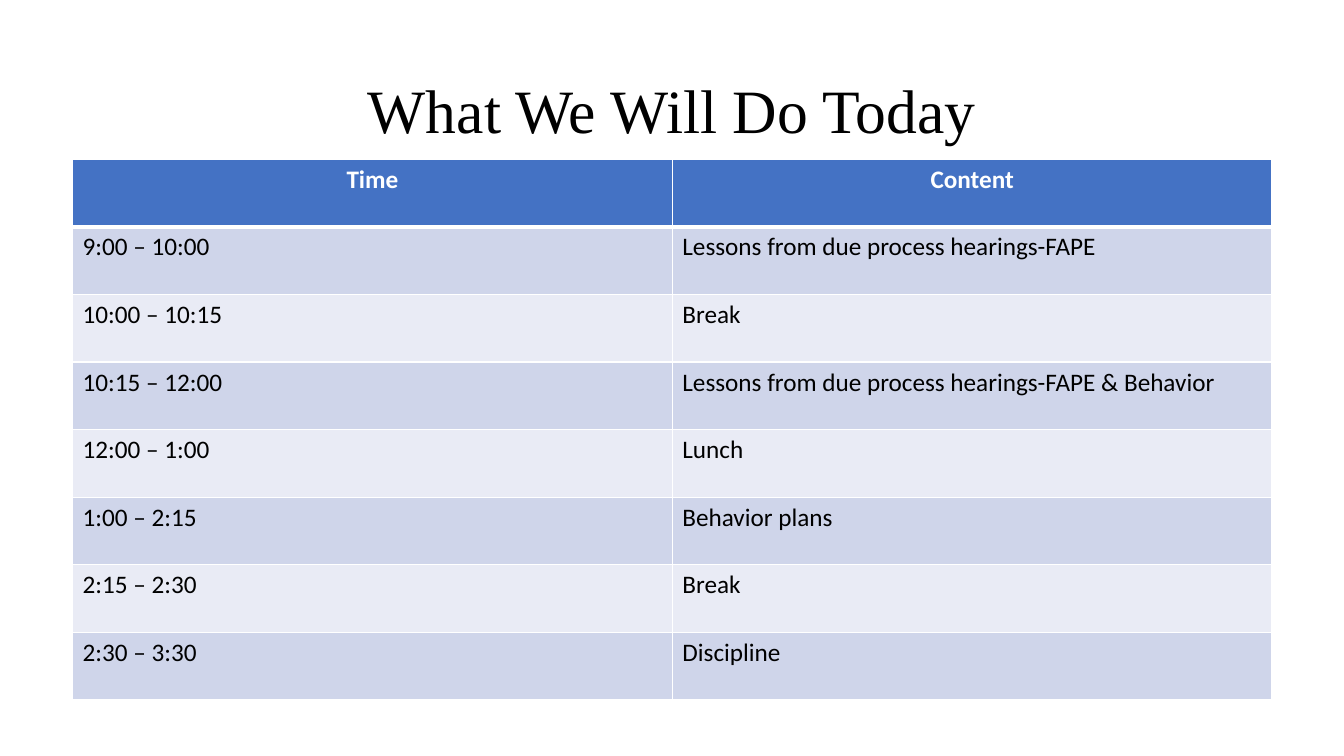
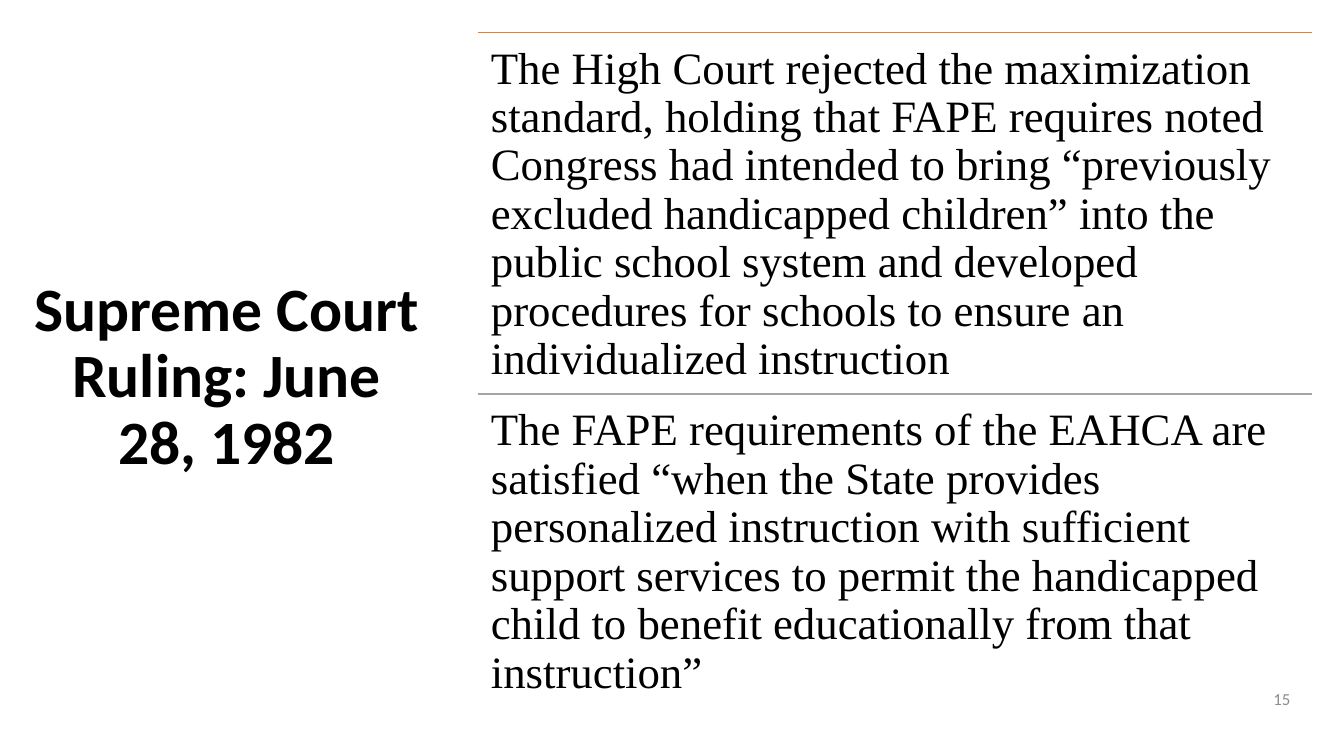
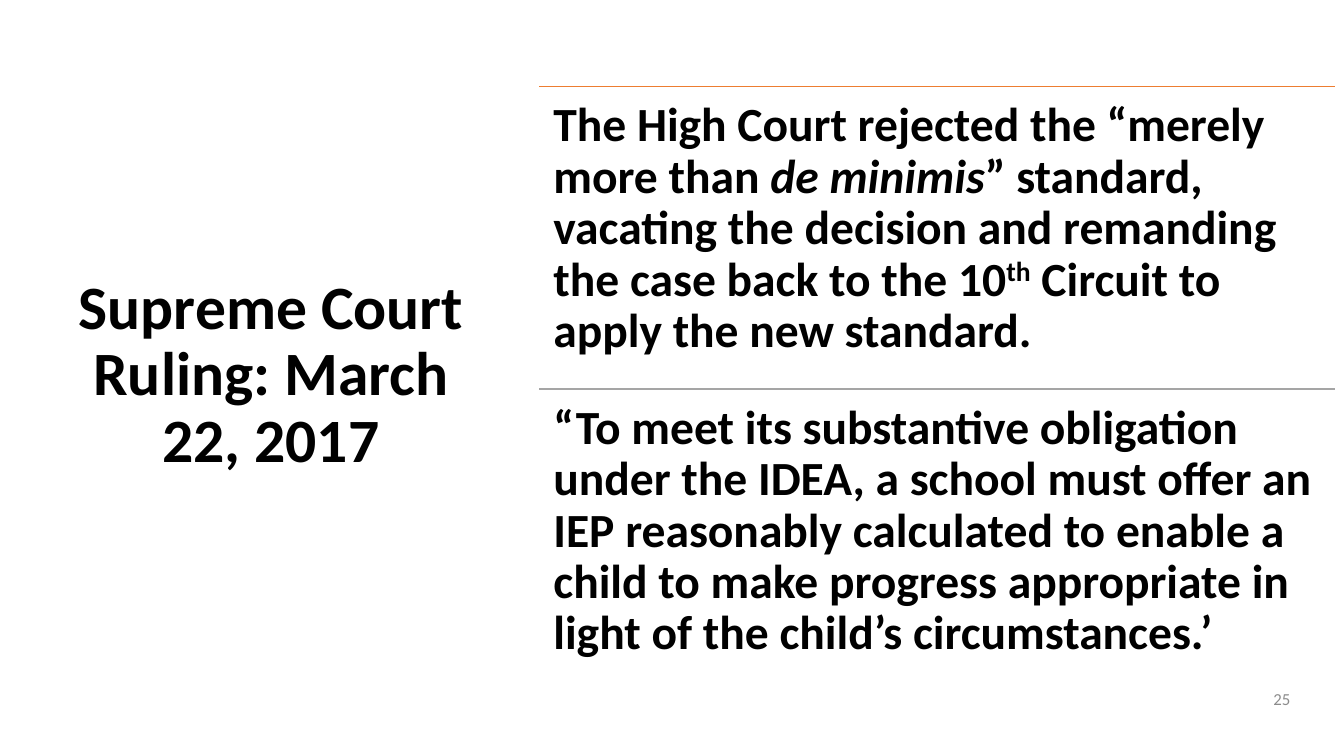
from lxml import etree
from pptx import Presentation
from pptx import util as u
from pptx.dml.color import RGBColor
from pptx.enum import shapes, text
from pptx.oxml import ns

COLS, ROWS = 160, 90
UNIT = u.Inches(1 / 12)
SANS, SERIF = "Calibri", "Times New Roman"
BLACK, WHITE, GREY = "000000", "FFFFFF", "8C8C8C"
HEADER, BANDS = "4472C4", ("CFD5EA", "E9EBF5")
RULES = ("ED7D31", "A5A5A5")
CENTER, RIGHT = text.PP_ALIGN.CENTER, text.PP_ALIGN.RIGHT
MIDDLE = text.MSO_ANCHOR.MIDDLE

AGENDA = [
    ("Time", "Content"),
    ("9:00 – 10:00", "Lessons from due process hearings-FAPE"),
    ("10:00 – 10:15", "Break"),
    ("10:15 – 12:00", "Lessons from due process hearings-FAPE & Behavior"),
    ("12:00 – 1:00", "Lunch"),
    ("1:00 – 2:15", "Behavior plans"),
    ("2:15 – 2:30", "Break"),
    ("2:30 – 3:30", "Discipline"),
]
RULING_1982 = [
    "The High Court rejected the maximization standard, holding that FAPE requires "
    "noted Congress had intended to bring “previously excluded handicapped children” "
    "into the public school system and developed procedures for schools to ensure an "
    "individualized instruction",
    "The FAPE requirements of the EAHCA are satisfied “when the State provides "
    "personalized instruction with sufficient support services to permit the "
    "handicapped child to benefit educationally from that instruction”",
]
RULING_2017 = [
    [("The High Court rejected the “merely more than ", {}),
     ("de minimis", {"italic": True}),
     ("” standard, vacating the decision and remanding the case back to the 10", {}),
     ("th", {"raised": True}),
     (" Circuit to apply the new standard.", {})],
    "“To meet its substantive obligation under the IDEA, a school must offer an IEP "
    "reasonably calculated to enable a child to make progress appropriate in light "
    "of the child’s circumstances.’",
]


def rgb(color):
    """Turn a hex string into a colour."""
    return RGBColor.from_string(color)


def grid(*units):
    """Turn grid columns or rows into lengths."""
    return [u.Emu(round(n * UNIT)) for n in units]


def write(tf, content, size=18, font=SANS, color=BLACK, bold=False,
          align=None, spacing=None):
    """Write a string or a list of (text, format) runs as one paragraph."""
    p = tf.paragraphs[0]
    p.alignment = align
    p.line_spacing = spacing
    runs = [(content, {})] if isinstance(content, str) else content
    for words, look in runs:
        r = p.add_run()
        r.text = words
        r.font.size, r.font.name, r.font.bold = u.Pt(size), font, bold
        r.font.color.rgb = rgb(color)
        if look.get("italic"):
            r.font.italic = True
        if look.get("raised"):
            r._r.get_or_add_rPr().set("baseline", "30000")


def add_text(s, box, content, anchor=None, inset=None, **look):
    """Add a wrapping text box."""
    tf = s.shapes.add_textbox(*grid(*box)).text_frame
    tf.word_wrap = True
    tf.vertical_anchor = anchor
    if inset:
        tf.margin_left = tf.margin_right = u.Inches(inset)
        tf.margin_top = tf.margin_bottom = u.Inches(inset)
    write(tf, content, **look)


def add_title(s, box, content, **look):
    """Add a centred slide title."""
    add_text(s, box, content, anchor=MIDDLE, size=44, align=CENTER, spacing=0.9, **look)


def add_rule(s, left, top, width, color):
    """Add a thin horizontal line."""
    line = s.shapes.add_connector(shapes.MSO_CONNECTOR.STRAIGHT,
                                  *grid(left, top, left + width, top))
    line.line.color.rgb = rgb(color)
    line.line.width = u.Pt(1)
    etree.SubElement(line._element.spPr, ns.qn("a:effectLst"))


def add_border(cell, side, width):
    """Add a white border to one side of a cell, before its fill is set."""
    ln = etree.SubElement(cell._tc.get_or_add_tcPr(), ns.qn("a:" + side),
                          w=str(u.Pt(width)))
    fill = etree.SubElement(ln, ns.qn("a:solidFill"))
    etree.SubElement(fill, ns.qn("a:srgbClr"), val=WHITE)


def add_schedule(s, box, rows):
    """Add a banded table with equal rows and columns."""
    table = s.shapes.add_table(len(rows), len(rows[0]), *grid(*box)).table
    for row in table.rows:
        row.height = grid(box[3] / len(rows))[0]
    for i, row in enumerate(rows):
        head = i == 0
        for j, words in enumerate(row):
            cell = table.cell(i, j)
            for side in ("lnL", "lnR", "lnT", "lnB"):
                thick = (head and side == "lnB") or (i == 1 and side == "lnT")
                add_border(cell, side, 3 if thick else 1)
            cell.fill.solid()
            cell.fill.fore_color.rgb = rgb(HEADER if head else BANDS[(i - 1) % 2])
            write(cell.text_frame, words, bold=head, color=WHITE if head else BLACK,
                  align=CENTER if head else None)


def add_points(s, box, points, inset, **look):
    """Stack equal text rows, each under a coloured rule."""
    left, top, width, height = box
    step = height / len(points)
    for i, (point, color) in enumerate(zip(points, RULES)):
        y = top + i * step
        add_rule(s, left, y, width, color)
        add_text(s, (left, y, width, step), point, inset=inset, spacing=0.9, **look)


def agenda_slide(s):
    """Build the timetable slide."""
    add_title(s, (11, 4.8, 138, 17.4), "What We Will Do Today", font=SERIF)
    add_schedule(s, (8.64, 18.96, 142.8, 64.4), AGENDA)


def ruling_slide(s, number, title, corner, points, box, **look):
    """Build a slide with a title at the left and ruled points at the right."""
    add_title(s, (*corner, 49.44, 74.88), title, bold=True)
    add_text(s, (144, 81.36, 10.8, 3.6), number, anchor=MIDDLE, size=12,
             color=GREY, align=RIGHT)
    add_points(s, box, points, **look)


def main():
    """Build and save the presentation."""
    prs = Presentation()
    prs.slide_width, prs.slide_height = grid(COLS, ROWS)
    agenda, first, second = [prs.slides.add_slide(prs.slide_layouts[6]) for _ in range(3)]
    agenda_slide(agenda)
    ruling_slide(first, "15", "Supreme Court Ruling: June 28, 1982", (2.28, 7.56),
                 RULING_1982, (56.88, 3.84, 99.36, 86.16),
                 inset=0.13, size=32, font=SERIF)
    ruling_slide(second, "25", "Supreme Court Ruling: March 22, 2017", (7.56, 7.32),
                 RULING_2017, (64.2, 10.32, 94.68, 72),
                 inset=0.14, size=34, bold=True)
    prs.save("out.pptx")


if __name__ == "__main__":
    main()
